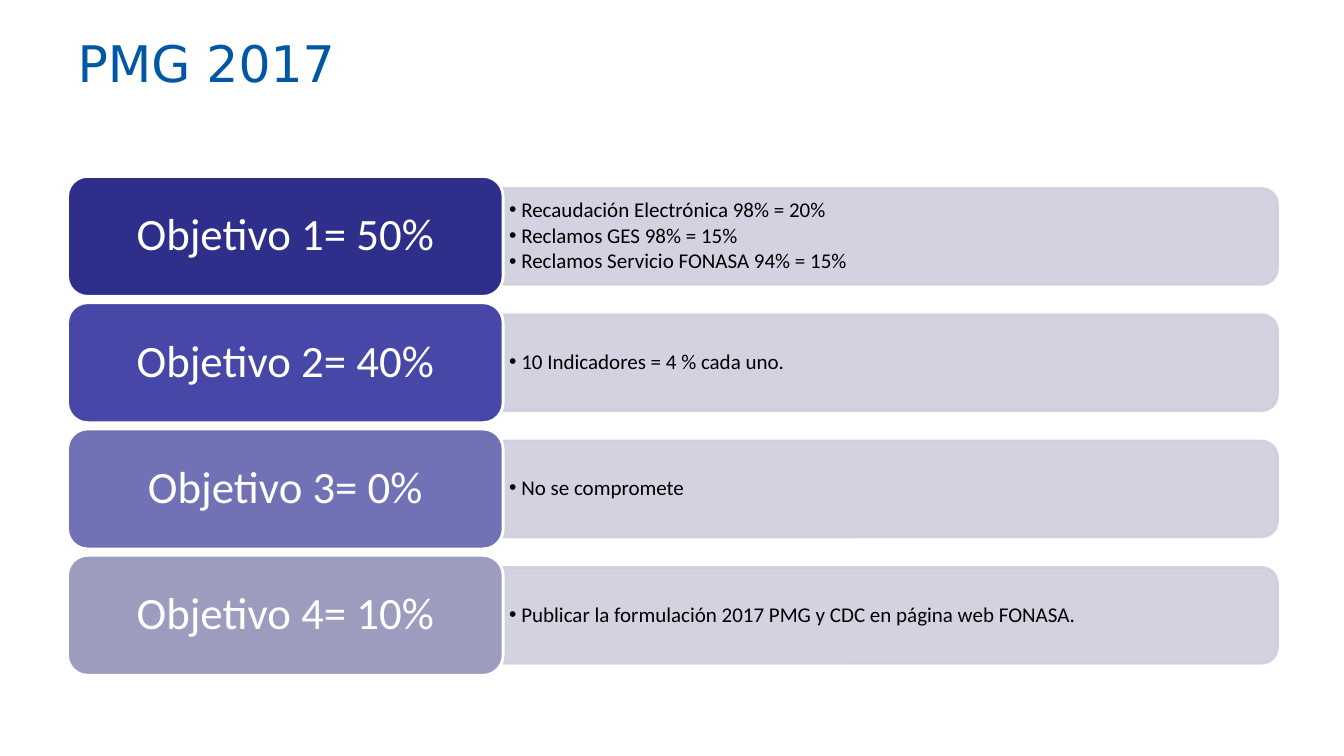
from dataclasses import dataclass

from lxml.etree import SubElement
from pptx import Presentation
from pptx.dml.color import RGBColor
from pptx.enum.shapes import MSO_SHAPE as Shape
from pptx.enum.text import MSO_ANCHOR as Anchor, MSO_AUTO_SIZE as AutoSize, PP_ALIGN as Align
from pptx.oxml.ns import qn
from pptx.util import Inches, Pt

COLORS = {
    "title": "0057A6", "bar": "CECEDE", "white": "FFFFFF", "black": "000000",
    "goal1": "2E2E8B", "goal2": "4747A8", "goal3": "7171B5", "goal4": "9C9CBF",
}
LEFT, TOP, PITCH = 0.67, 1.75, 1.253
LABEL_W, LABEL_H = 4.32, 1.19
BAR_W, BAR_H = 7.68, 0.95
DETAIL_W, DETAIL_H = 7.63, 0.86


@dataclass
class Goal:
    label: str
    color: str
    details: list[str]


GOALS = [
    Goal("Objetivo 1= 50%", "goal1", [
        "Recaudación Electrónica 98% = 20%",
        "Reclamos GES 98% = 15%",
        "Reclamos Servicio FONASA 94% = 15%",
    ]),
    Goal("Objetivo 2= 40%", "goal2", ["10 Indicadores = 4 % cada uno."]),
    Goal("Objetivo 3= 0%", "goal3", ["No se compromete"]),
    Goal("Objetivo 4= 10%", "goal4",
         ["Publicar la formulación 2017 PMG y CDC en página web FONASA."]),
]


def rgb(name: str) -> RGBColor:
    return RGBColor.from_string(COLORS[name])


def place(sp, left: float, top: float, width: float, height: float) -> None:
    sp.left, sp.top = Inches(left), Inches(top)
    sp.width, sp.height = Inches(width), Inches(height)


def set_frame(tf, anchor: Anchor, inset_x: float, inset_y: float) -> None:
    tf.word_wrap, tf.auto_size, tf.vertical_anchor = True, AutoSize.NONE, anchor
    tf.margin_left = tf.margin_right = Inches(inset_x)
    tf.margin_top = tf.margin_bottom = Inches(inset_y)


def add_run(p, text: str, size: float, font: str, color: str) -> None:
    r = p.add_run()
    r.text = text
    r.font.size, r.font.name, r.font.bold = Pt(size), font, False
    r.font.color.rgb = rgb(color)


def add_box(s, kind: Shape, at: tuple, fill: str, line: str):
    sp = s.shapes.add_shape(kind, *(Inches(v) for v in at))
    sp.shadow.inherit = False
    sp.fill.solid()
    sp.fill.fore_color.rgb = rgb(fill)
    sp.line.color.rgb = rgb(line)
    sp.line.width = Pt(2)
    return sp


def add_bar(s, left: float, middle: float):
    """Draw a tall shape turned a quarter so its rounded end faces right."""
    at = (left + (BAR_W - BAR_H) / 2, middle - BAR_W / 2, BAR_H, BAR_W)
    sp = add_box(s, Shape.ROUND_2_SAME_RECTANGLE, at, "bar", "bar")
    sp.rotation = 90
    for color in sp.element.spPr.iter(qn("a:srgbClr")):
        SubElement(color, qn("a:alpha"), val="90000")
    return sp


def fill_details(ph, details: list[str]) -> None:
    tf = ph.text_frame
    set_frame(tf, Anchor.MIDDLE, 0.06, 0.03)
    for i, text in enumerate(details):
        p = tf.add_paragraph() if i else tf.paragraphs[0]
        pPr = p._p.get_or_add_pPr()
        pPr.set("marL", str(Inches(0.12)))
        pPr.set("indent", str(Inches(-0.12)))
        SubElement(pPr, qn("a:buChar"), char="•")
        p.alignment, p.line_spacing = Align.LEFT, 0.9
        p.space_before, p.space_after = Pt(0), Pt(2.25)
        add_run(p, text, 15, "Calibri", "black")


def add_goal(s, goal: Goal, ph, top: float) -> None:
    middle = top + LABEL_H / 2
    right = LEFT + LABEL_W

    # Detail bar with its list on top
    bar = add_bar(s, right, middle)
    place(ph, right, middle - DETAIL_H / 2, DETAIL_W, DETAIL_H)
    fill_details(ph, goal.details)
    bar.element.addnext(ph.element)

    # Label
    at = (LEFT, top, LABEL_W, LABEL_H)
    sp = add_box(s, Shape.ROUNDED_RECTANGLE, at, goal.color, "white")
    set_frame(sp.text_frame, Anchor.MIDDLE, 0.18, 0.12)
    p = sp.text_frame.paragraphs[0]
    p.alignment, p.line_spacing = Align.CENTER, 0.9
    add_run(p, goal.label, 32, "Calibri", "white")


def main() -> None:
    prs = Presentation()
    prs.slide_width, prs.slide_height = Inches(13.33), Inches(7.5)
    # The comparison layout offers a title and four body placeholders
    s = prs.slides.add_slide(prs.slide_layouts.get_by_name("Comparison"))
    title, *bodies = s.placeholders

    # Title
    place(title, LEFT, 0.27, 12, 1.25)
    set_frame(title.text_frame, Anchor.TOP, 0.1, 0.05)
    p = title.text_frame.paragraphs[0]
    p.alignment = Align.LEFT
    add_run(p, "PMG 2017", 36, "DejaVu Sans", "title")

    # Goal rows
    for i, (goal, ph) in enumerate(zip(GOALS, bodies)):
        add_goal(s, goal, ph, TOP + i * PITCH)

    prs.save("out.pptx")


if __name__ == "__main__":
    main()
